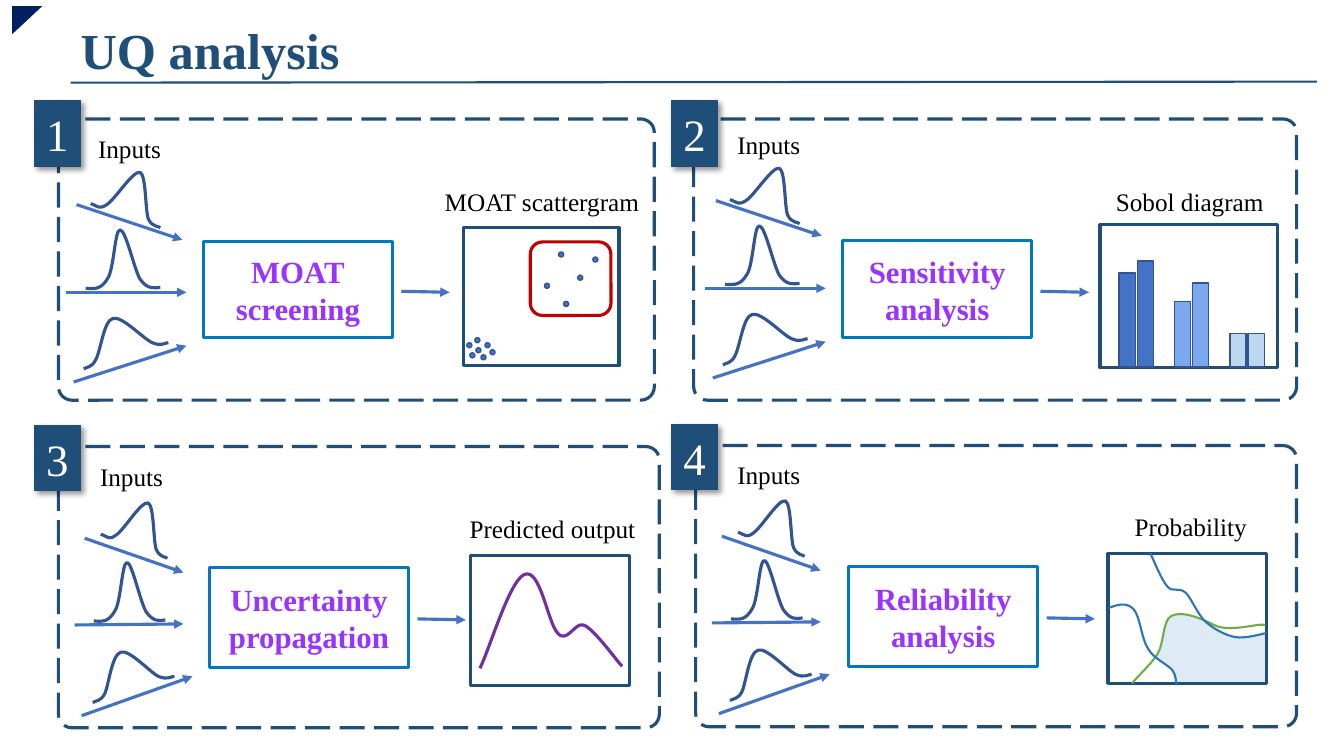
from pptx import Presentation
from pptx.dml.color import RGBColor
from pptx.enum.dml import MSO_LINE
from pptx.enum.shapes import MSO_CONNECTOR, MSO_SHAPE
from pptx.enum.text import MSO_ANCHOR, MSO_AUTO_SIZE, PP_ALIGN
from pptx.oxml.ns import qn
from pptx.oxml.xmlchemy import OxmlElement
from pptx.util import Pt

RECT, ROUND = MSO_SHAPE.RECTANGLE, MSO_SHAPE.ROUNDED_RECTANGLE
OVAL, WEDGE = MSO_SHAPE.OVAL, MSO_SHAPE.RIGHT_TRIANGLE
DASH, STRAIGHT = MSO_LINE.LONG_DASH, MSO_CONNECTOR.STRAIGHT
LEFT, CENTER, MIDDLE = PP_ALIGN.LEFT, PP_ALIGN.CENTER, MSO_ANCHOR.MIDDLE
FIT = MSO_AUTO_SIZE.SHAPE_TO_FIT_TEXT

SCALE = 9144  # EMU in one px, 100 px to the inch
NAVY, BLUE, INK, CYAN = "1F4E79", "4472C4", "325491", "0079C1"
BLACK, WHITE, VIOLET = "000000", "FFFFFF", "9933FF"

# Input curves, as cubic steps relative to their first point
BELLS = [
    [(8, 3, 8, 6, 16, 1), (24, -4, 42, -33, 49, -31),
     (55, -28, 54, 6, 57, 15), (61, 24, 68, 22, 69, 24)],
    [(11, 1, 16, 0, 22, -10), (28, -19, 29, -58, 34, -58),
     (40, -58, 48, -19, 54, -9), (61, 1, 68, 0, 74, -1)],
    [(3, -2, 8, -1, 12, -9), (17, -18, 20, -48, 29, -50),
     (38, -53, 59, -30, 68, -26), (77, -22, 81, -26, 84, -26)],
]
# Places of the inputs in the upper and the lower row
UPPER = dict(label=(80, 127), starts=[(90, 202), (85, 286), (83, 366)], squeeze=1,
             axes=[(76, 203, 181, 238), (65, 290, 185, 290), (73, 379, 185, 343)])
LOWER = dict(label=(82, 453), starts=[(100, 530), (93, 616), (92, 697)], squeeze=0.96,
             axes=[(84, 534, 182, 568), (74, 620, 182, 619), (81, 710, 191, 671)])


def px(*sizes):
    return [round(size * SCALE) for size in sizes]


def rgb(code):
    return RGBColor.from_string(code)


def write(frame, text, size=18, color=BLACK, bold=False, align=CENTER):
    for i, line in enumerate(text.split("\n")):
        para = frame.add_paragraph() if i else frame.paragraphs[0]
        para.alignment = align
        run = para.add_run()
        run.text = line
        font = run.font
        font.name, font.size, font.bold = "Times New Roman", Pt(size), bold
        font.color.rgb = rgb(color)


class Board:
    def __init__(self, slide):
        self.shapes = slide.shapes

    def paint(self, shape, fill=None, line=None, width=2.25):
        shape.shadow.inherit = False
        if fill:
            shape.fill.solid()
            shape.fill.fore_color.rgb = rgb(fill)
        else:
            shape.fill.background()
        if line:
            shape.line.color.rgb = rgb(line)
            shape.line.width = Pt(width)
        else:
            shape.line.fill.background()
        return shape

    def shape(self, kind, box, **style):
        return self.paint(self.shapes.add_shape(kind, *px(*box)), **style)

    def text(self, box, text, **style):
        frame = self.shapes.add_textbox(*px(*box)).text_frame
        frame.word_wrap = True
        frame.auto_size = FIT
        write(frame, text, **style)

    def line(self, ends, color=BLUE, width=2.25, arrow=True):
        link = self.shapes.add_connector(STRAIGHT, *px(*ends))
        link.line.color.rgb = rgb(color)
        link.line.width = Pt(width)
        if arrow:
            tip = OxmlElement("a:tailEnd")
            tip.set("type", "triangle")
            link.line._get_or_add_ln().append(tip)
        link.element.spPr.append(OxmlElement("a:effectLst"))

    def curve(self, start, steps, close=False, **style):
        """Steps of two numbers are straight, steps of six are cubic."""
        build = self.shapes.build_freeform(*start, scale=SCALE)
        for step in steps:
            build.add_line_segments(list(zip(step[::2], step[1::2])), close=False)
        if close:
            build.add_line_segments([], close=True)
        shape = build.convert_to_shape()
        marks = iter(list(shape.element.iter(qn("a:lnTo"))))
        for step in steps:
            group = [next(marks) for _ in step[::2]]
            if len(group) == 3:
                cubic = OxmlElement("a:cubicBezTo")
                group[0].addprevious(cubic)
                for mark in group:
                    cubic.append(mark[0])
                    mark.getparent().remove(mark)
        return self.paint(shape, **style)

    def badge(self, x, y, num):
        shape = self.shape(RECT, (x, y, 46, 65), fill=NAVY, line=NAVY, width=0.75)
        shape.text_frame.vertical_anchor = MIDDLE
        write(shape.text_frame, num, size=32, color=WHITE)
        shade = OxmlElement("a:outerShdw")
        for key, val in dict(blurRad=50800, dist=38100, dir=2700000, algn="tl").items():
            shade.set(key, str(val))
        tone, alpha = OxmlElement("a:srgbClr"), OxmlElement("a:alpha")
        tone.set("val", BLACK)
        alpha.set("val", "40000")
        tone.append(alpha)
        shade.append(tone)
        shape.element.spPr.find(qn("a:effectLst")).append(shade)

    def inputs(self, row, dx, dy):
        x, y = row["label"]
        self.text((x + dx, y + dy, 97, 40), "Inputs")
        for (x, y), bell, axis in zip(row["starts"], BELLS, row["axes"]):
            x, y = x + dx, y + dy
            steps = [[round(x + n * row["squeeze"]) if i % 2 == 0 else y + n
                      for i, n in enumerate(step)] for step in bell]
            self.line([n + (dy if i % 2 else dx) for i, n in enumerate(axis)])
            self.curve((x, y), steps, line=INK)

    def panel(self, num, frame, badge, row, shift, method, box, label, spot, plot):
        self.inputs(row, *shift)
        # Method box and the arrow out of it
        shape = self.shape(RECT, box, line=CYAN)
        shape.text_frame.vertical_anchor = MIDDLE
        write(shape.text_frame, method, size=22, color=VIOLET, bold=True)
        x, y, w, h = box
        out, mid = x + w + 9, y + h // 2 + 3
        self.line((out, mid - 1, out + 48, mid))
        # Result plot, dashed frame and number
        self.text((*spot, 40), label)
        self.shape(RECT, plot, line=NAVY)
        edge = self.shape(ROUND, frame, line=NAVY)
        edge.adjustments[0] = 0.048
        edge.line.dash_style = DASH
        self.badge(*badge, num)


def main():
    deck = Presentation()
    deck.slide_width, deck.slide_height = px(1333, 750)
    board = Board(deck.slides.add_slide(deck.slide_layouts[6]))

    # Heading
    board.text((70, 14, 568, 71), "UQ analysis", size=36, color=NAVY, bold=True, align=LEFT)
    board.line((70, 82, 1306, 81), color=NAVY, width=1.5, arrow=False)
    board.shape(WEDGE, (13, 5, 28, 30), fill="002060").rotation = 90

    # 1: scattergram
    board.panel("1", (58, 118, 591, 279), (34, 100), UPPER, (0, 0),
                "MOAT\nscreening", (202, 240, 187, 95),
                "MOAT scattergram", (430, 180, 215), (460, 226, 154, 137))
    dots = [(486, 347), (463, 340), (472, 345), (481, 340), (471, 335), (466, 350), (477, 352),
            (588, 255), (554, 250), (540, 281), (559, 299), (573, 273)]
    for x, y in dots:
        board.shape(OVAL, (x, y, 5, 5), fill=BLUE, line=INK, width=1)
    board.shape(ROUND, (526, 240, 80, 73), line="C00000")

    # 2: bars in pairs
    board.panel("2", (688, 118, 598, 279), (666, 100), UPPER, (634, -4),
                "Sensitivity\nanalysis", (836, 239, 187, 96),
                "Sobol diagram", (1083, 180, 194), (1091, 223, 176, 142))
    pairs = [(BLUE, 93, 105), ("7CA8F0", 65, 83), ("BDD7EE", 33, 33)]
    for i, (color, *highs) in enumerate(pairs):
        for j, high in enumerate(highs):
            board.shape(RECT, (1110 + 55 * i + 18 * j, 364 - high, 16, high),
                        fill=color, line=INK, width=1)

    # 3: predicted output
    board.panel("3", (58, 443, 596, 279), (34, 422), LOWER, (0, 0),
                "Uncertainty\npropagation", (208, 563, 197, 99),
                "Predicted output", (451, 504, 194), (467, 551, 157, 129))
    board.curve((476, 663), [(486, 643, 505, 577, 520, 570), (536, 563, 543, 617, 553, 628),
                             (562, 639, 570, 618, 578, 620), (587, 621, 612, 656, 617, 661)],
                line="7030A0")

    # 4: probability region and its limits
    board.curve((1161, 611), [
        (1166, 609, 1165, 609, 1169, 608), (1175, 609, 1175, 608, 1182, 611),
        (1189, 613, 1189, 612, 1193, 615), (1196, 618, 1202, 622, 1206, 624),
        (1211, 627, 1221, 632, 1229, 632), (1251, 632, 1245, 630, 1256, 628),
        (1256, 678), (1167, 679), (1167, 671, 1166, 668, 1161, 663), (1146, 652),
        (1149, 646, 1150, 645, 1152, 635), (1154, 623, 1157, 615, 1161, 611)],
        close=True, fill="DEEBF7")
    board.panel("4", (690, 442, 596, 279), (666, 421), LOWER, (632, -2),
                "Reliability\nanalysis", (842, 562, 187, 99),
                "Probability", (1084, 502, 194), (1099, 549, 157, 129))
    limits = [
        ("70AD47", (1123, 678), [
            (1125, 674, 1141, 660, 1148, 649), (1155, 637, 1153, 615, 1162, 611),
            (1172, 606, 1188, 612, 1204, 620), (1220, 628, 1247, 618, 1255, 620)]),
        ("2E75B6", (1141, 549), [
            (1147, 562, 1152, 575, 1158, 582), (1163, 588, 1169, 582, 1176, 588),
            (1182, 594, 1188, 610, 1196, 617), (1204, 624, 1215, 630, 1225, 632),
            (1235, 634, 1255, 628, 1256, 628)]),
        ("2E75B6", (1100, 603), [
            (1108, 600, 1117, 597, 1124, 604), (1131, 611, 1132, 634, 1139, 644),
            (1145, 654, 1158, 659, 1163, 665), (1167, 671, 1166, 677, 1167, 679)]),
    ]
    for color, start, steps in limits:
        board.curve(start, steps, line=color, width=1.5)

    deck.save("out.pptx")


if __name__ == "__main__":
    main()
